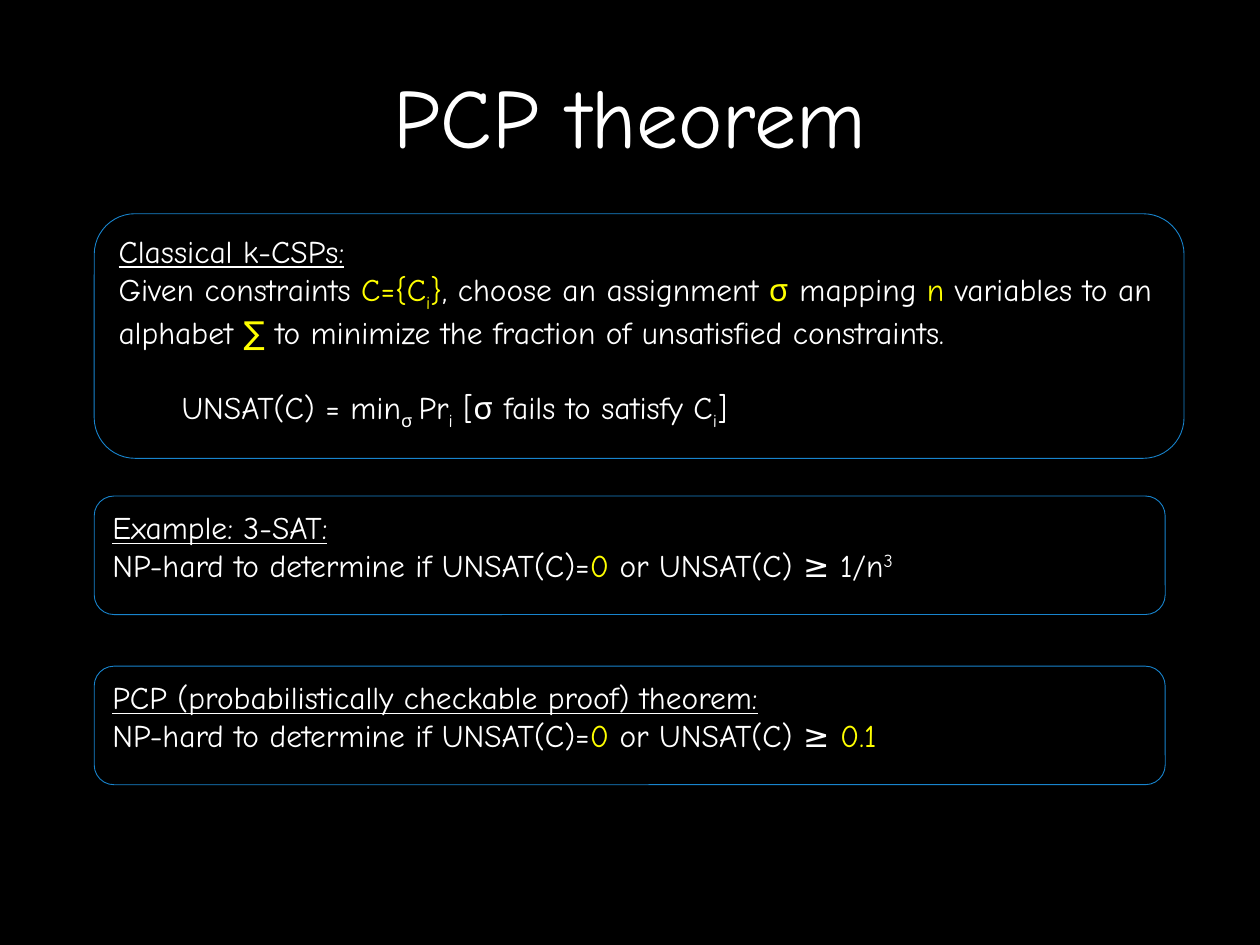
import pptx
import pptx.dml.color
import pptx.enum.shapes
import pptx.enum.text
import pptx.util

Cm = pptx.util.Cm
Pt = pptx.util.Pt
RGBColor = pptx.dml.color.RGBColor
Anchor = pptx.enum.text.MSO_ANCHOR
Align = pptx.enum.text.PP_ALIGN

BLACK = RGBColor(0x00, 0x00, 0x00)
WHITE = RGBColor(0xFF, 0xFF, 0xFF)
YELLOW = RGBColor(0xFF, 0xFF, 0x00)
BLUE = RGBColor(0x18, 0x84, 0xCD)

HEADING = {"underline": True}
ACCENT = {"color": YELLOW}
SUB = {"baseline": -25}
SUPER = {"baseline": 30}


def add_span(para, text, font="Comic Neue", size=18, color=WHITE, underline=None, baseline=0):
    span = para.add_run()
    span.text = text
    span.font.name = font
    span.font.size = Pt(size)
    span.font.color.rgb = color
    span.font.underline = underline
    if baseline:
        span._r.get_or_add_rPr().set("baseline", str(baseline * 1000))


class SlideWriter:
    left = Cm(1.9)

    def __init__(self, deck):
        self.page = deck.slides.add_slide(deck.slide_layouts[5])
        self.page.background.fill.solid()
        self.page.background.fill.fore_color.rgb = BLACK

    def title(self, text, top, width, height):
        box = self.page.shapes.title
        box.left, box.top, box.width, box.height = self.left, top, width, height
        box.text_frame.vertical_anchor = Anchor.MIDDLE
        para = box.text_frame.paragraphs[0]
        para.alignment = Align.CENTER
        add_span(para, text, size=48)

    def panel(self, top, width, height, lines):
        box = self.page.shapes.add_shape(
            pptx.enum.shapes.MSO_SHAPE.ROUNDED_RECTANGLE, self.left, top, width, height)
        box.shadow.inherit = False
        box.fill.background()
        box.line.color.rgb = BLUE
        box.line.width = Pt(0.5)
        frame = box.text_frame
        frame.word_wrap = True
        frame.vertical_anchor = Anchor.TOP
        for index, line in enumerate(lines):
            para = frame.paragraphs[0] if index == 0 else frame.add_paragraph()
            para.alignment = Align.LEFT
            for text, style in line:
                add_span(para, text, **style)
        return frame


def main():
    deck = pptx.Presentation()
    deck.slide_width, deck.slide_height = Cm(25.4), Cm(19.05)
    writer = SlideWriter(deck)
    writer.title("PCP theorem", Cm(0.33), Cm(21.59), Cm(3.96))

    definition = writer.panel(Cm(4.31), Cm(21.97), Cm(4.93), [
        [("Classical k-CSPs:", HEADING)],
        [("Given constraints ", {}), ("C={C", ACCENT), ("i", ACCENT | SUB), ("}", ACCENT),
         (", choose an assignment ", {}), ("σ", ACCENT), (" mapping ", {}), ("n", ACCENT),
         (" variables to an alphabet ", {}), ("∑", ACCENT),
         (" to minimize the fraction of unsatisfied constraints.", {})],
        [("\tUNSAT(C) = min", {}), ("σ ", SUB), ("Pr", {}), ("i", SUB),
         (" [σ fails to satisfy C", {}), ("i", SUB), ("]", {})],
    ])
    definition.paragraphs[-1].space_before = Pt(21.5)

    results = [
        ("Example: 3-SAT:", [("1/n", {}), ("3", SUPER)]),
        ("PCP (probabilistically checkable proof) theorem:", [("0.1", ACCENT)]),
    ]
    for index, (heading, bound) in enumerate(results):
        writer.panel(Cm(10 + 3.43 * index), Cm(21.59), Cm(2.39), [
            [(heading, HEADING)],
            [("NP-hard to determine if UNSAT(C)=", {}), ("0", ACCENT),
             (" or UNSAT(C) ≥ ", {}), *bound],
        ])

    deck.save("out.pptx")


if __name__ == "__main__":
    main()
